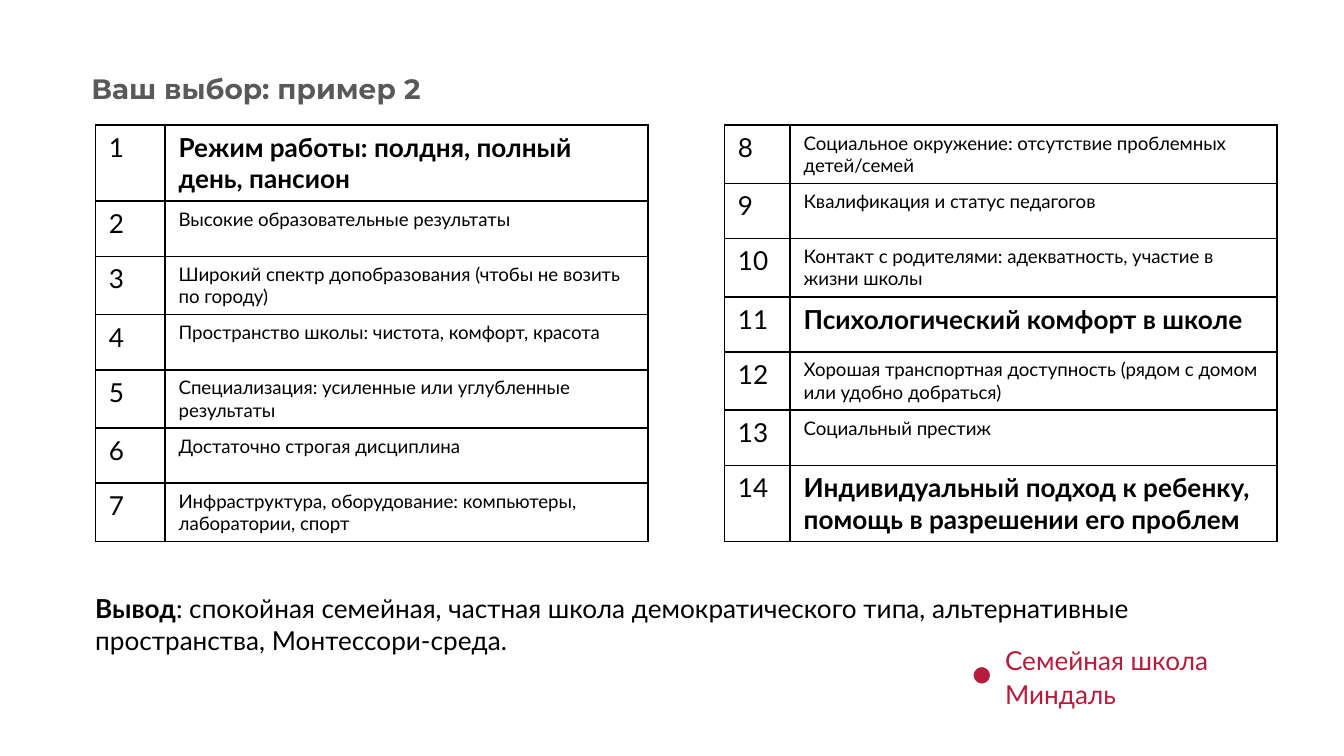
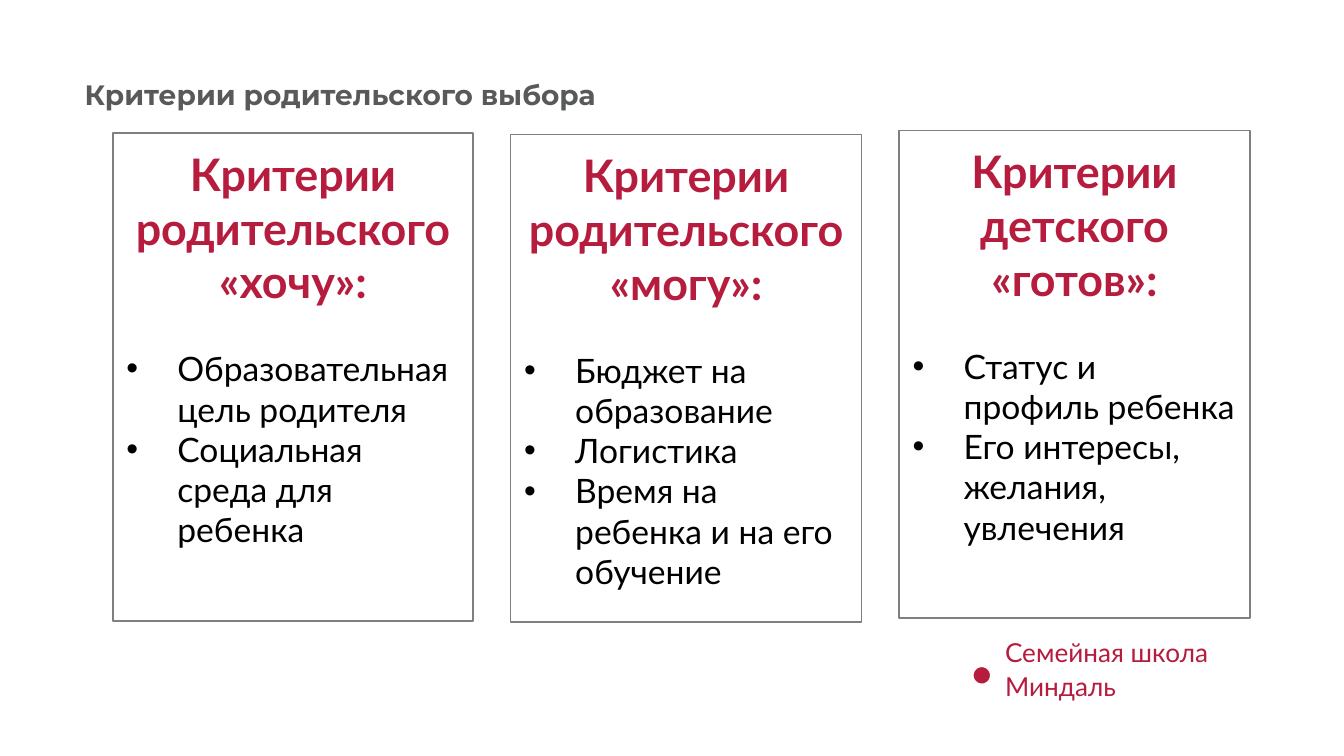
from dataclasses import dataclass

import pptx
import pptx.dml.color
import pptx.enum.shapes
import pptx.enum.text
import pptx.oxml
import pptx.oxml.ns
import pptx.util
from lxml import etree

Inches = pptx.util.Inches
Pt = pptx.util.Pt
qn = pptx.oxml.ns.qn

COLORS = {
    "title": "58595B",
    "accent": "B61C3D",
    "text": "000000",
    "frame": "7F7F7F",
    "paper": "FFFFFF",
}
BODY_FONT = "Lato"
TITLE_FONT = "Montserrat"
TITLE_ONLY, COMPARISON = 5, 4
ROW_HEIGHT = 0.41
LIST_INDENT = 0.38


@dataclass
class CriteriaTable:
    left: float
    columns: tuple[float, float]
    first_number: int
    criteria: list[str]


@dataclass
class CriteriaCard:
    left: float
    top: float
    width: float
    heading: str
    items: list[str]


CARD_HEIGHT = 3.63
CHOSEN = {1, 11, 14}  # criteria set large and bold

TABLES = [
    CriteriaTable(0.71, (0.52, 3.59), 1, [
        "Режим работы: полдня, полный день, пансион",
        "Высокие образовательные результаты",
        "Широкий спектр допобразования (чтобы не возить по городу)",
        "Пространство школы: чистота, комфорт, красота",
        "Специализация: усиленные или углубленные результаты",
        "Достаточно строгая дисциплина",
        "Инфраструктура, оборудование: компьютеры, лаборатории, спорт",
    ]),
    CriteriaTable(5.39, (0.49, 3.62), 8, [
        "Социальное окружение: отсутствие проблемных детей/семей",
        "Квалификация и статус педагогов",
        "Контакт с родителями: адекватность, участие в жизни школы",
        "Психологический комфорт в школе",
        "Хорошая транспортная доступность (рядом с домом или удобно добраться)",
        "Социальный престиж",
        "Индивидуальный подход к ребенку, помощь в разрешении его проблем",
    ]),
]

CARDS = [
    CriteriaCard(0.84, 0.99, 2.68, "Критерии родительского «хочу»:", [
        "Образовательная цель родителя",
        "Социальная среда для ребенка",
    ]),
    CriteriaCard(3.8, 1, 2.61, "Критерии родительского «могу»:", [
        "Бюджет на образование",
        "Логистика",
        "Время на ребенка и на его обучение",
    ]),
    CriteriaCard(6.69, 0.97, 2.61, "Критерии детского «готов»:", [
        "Статус и профиль ребенка",
        "Его интересы, желания, увлечения",
    ]),
]


# Shared helpers
def rgb(name: str) -> pptx.dml.color.RGBColor:
    return pptx.dml.color.RGBColor.from_string(COLORS[name])


def format_run(r, size: float, color: str = "text", bold: bool = False,
               font: str = BODY_FONT) -> None:
    r.font.name = font
    r.font.size = Pt(size)
    r.font.bold = bold
    r.font.color.rgb = rgb(color)


def place(shape, left: float, top: float, width: float, height: float) -> None:
    shape.left, shape.top = Inches(left), Inches(top)
    shape.width, shape.height = Inches(width), Inches(height)


def prepare_frame(tf, inset: float, grow: bool = False) -> None:
    sizes = pptx.enum.text.MSO_AUTO_SIZE
    tf.word_wrap = True
    tf.auto_size = sizes.SHAPE_TO_FIT_TEXT if grow else sizes.NONE
    tf.vertical_anchor = pptx.enum.text.MSO_ANCHOR.TOP
    tf.margin_left = tf.margin_right = Inches(0.1)
    tf.margin_top = tf.margin_bottom = Inches(inset)


def set_bullet(p, char: str = "") -> None:
    """Give a paragraph a hanging bullet, or none at all."""
    pPr = p._p.get_or_add_pPr()
    indent = Inches(LIST_INDENT) if char else 0
    pPr.set("marL", str(indent))
    pPr.set("indent", str(-indent))
    if not char:
        etree.SubElement(pPr, qn("a:buNone"))
        return
    color = etree.SubElement(pPr, qn("a:buClr"))
    etree.SubElement(color, qn("a:srgbClr"), val=COLORS["text"])
    etree.SubElement(pPr, qn("a:buFont"), typeface="Arial")
    etree.SubElement(pPr, qn("a:buChar"), char=char)


def add_title(s, text: str, left: float, top: float) -> None:
    sp = s.shapes.title
    place(sp, left, top, 8.93, 0.63)
    tf = sp.text_frame
    prepare_frame(tf, 0.1)
    tf.text = text
    p = tf.paragraphs[0]
    p.alignment = pptx.enum.text.PP_ALIGN.LEFT
    format_run(p.runs[0], 15, "title", True, TITLE_FONT)


def add_footer(s, top: float) -> None:
    group = s.shapes.add_group_shape()
    sp = group.shapes.add_textbox(Inches(7.38), Inches(top), Inches(2.44), Inches(0.35))
    tf = sp.text_frame
    prepare_frame(tf, 0.05, grow=True)
    tf.text = "Семейная школа Миндаль"
    p = tf.paragraphs[0]
    p.line_spacing = 1.1
    format_run(p.runs[0], 14, "accent")

    dot = group.shapes.add_shape(pptx.enum.shapes.MSO_SHAPE.OVAL,
                                 Inches(7.23), Inches(4.95), Inches(0.15), Inches(0.15))
    dot.shadow.inherit = False
    dot.fill.solid()
    dot.fill.fore_color.rgb = rgb("accent")
    dot.line.color.rgb = rgb("paper")
    dot.line.width = Pt(2)


# Tables
def format_cell(cell, text: str, size: float, bold: bool = False) -> None:
    cell.text = text
    format_run(cell.text_frame.paragraphs[0].runs[0], size, bold=bold)
    tcPr = cell._tc.get_or_add_tcPr()
    for side in ("lnL", "lnR", "lnT", "lnB"):
        ln = etree.SubElement(tcPr, qn(f"a:{side}"), w=str(Pt(1)))
        fill = etree.SubElement(ln, qn("a:solidFill"))
        etree.SubElement(fill, qn("a:srgbClr"), val=COLORS["text"])
    cell.fill.solid()
    cell.fill.fore_color.rgb = rgb("paper")


def add_criteria_table(s, spec: CriteriaTable) -> None:
    count = len(spec.criteria)
    table = s.shapes.add_table(count, 2, Inches(spec.left), Inches(0.93),
                               Inches(sum(spec.columns)),
                               Inches(count * ROW_HEIGHT)).table
    table.first_row = table.horz_banding = False
    for column, width in zip(table.columns, spec.columns):
        column.width = Inches(width)
    for i, criterion in enumerate(spec.criteria):
        number = spec.first_number + i
        chosen = number in CHOSEN
        table.rows[i].height = Inches(ROW_HEIGHT)
        format_cell(table.cell(i, 0), str(number), 14)
        format_cell(table.cell(i, 1), criterion, 14 if chosen else 10, chosen)


def add_conclusion(s) -> None:
    sp = s.shapes.add_textbox(Inches(0.61), Inches(4.36), Inches(8.8), Inches(0.57))
    tf = sp.text_frame
    prepare_frame(tf, 0.05, grow=True)
    p = tf.paragraphs[0]
    for text, bold in (
        ("Вывод", True),
        (": спокойная семейная, частная школа демократического типа, "
         "альтернативные пространства, Монтессори-среда.", False),
    ):
        r = p.add_run()
        r.text = text
        format_run(r, 14, bold=bold)


# Cards
def fill_card(sp, card: CriteriaCard) -> None:
    place(sp, card.left, card.top, card.width, CARD_HEIGHT)
    sp.line.color.rgb = rgb("frame")
    sp.line.width = Pt(0.75)
    tf = sp.text_frame
    prepare_frame(tf, 0.1)
    tf.text = "\n".join([card.heading, *card.items])
    for i, p in enumerate(tf.paragraphs):
        is_heading = i == 0
        p.space_before = Pt(0)
        p.space_after = Pt(21.6 if is_heading else 0)
        align = pptx.enum.text.PP_ALIGN
        p.alignment = align.CENTER if is_heading else align.LEFT
        set_bullet(p, "" if is_heading else "•")
        if is_heading:
            format_run(p.runs[0], 24, "accent", True)
        else:
            format_run(p.runs[0], 18)


# Slides
def build_example_slide(prs) -> None:
    s = prs.slides.add_slide(prs.slide_layouts[TITLE_ONLY])
    add_title(s, "Ваш выбор: пример 2", 0.58, 0.43)
    add_footer(s, 4.72)
    for table in TABLES:
        add_criteria_table(s, table)
    add_conclusion(s)


def build_criteria_slide(prs) -> None:
    s = prs.slides.add_slide(prs.slide_layouts[COMPARISON])
    add_title(s, "Критерии родительского выбора", 0.53, 0.48)
    add_footer(s, 4.66)
    bodies = list(s.placeholders)[1:]
    for sp, card in zip(bodies, CARDS):
        fill_card(sp, card)
    for sp in bodies[len(CARDS):]:
        sp._element.getparent().remove(sp._element)


def main() -> None:
    prs = pptx.Presentation()
    prs.slide_width = Inches(10)
    prs.slide_height = prs.slide_width * 9 // 16  # widescreen
    build_example_slide(prs)
    build_criteria_slide(prs)
    prs.save("out.pptx")


if __name__ == "__main__":
    main()
